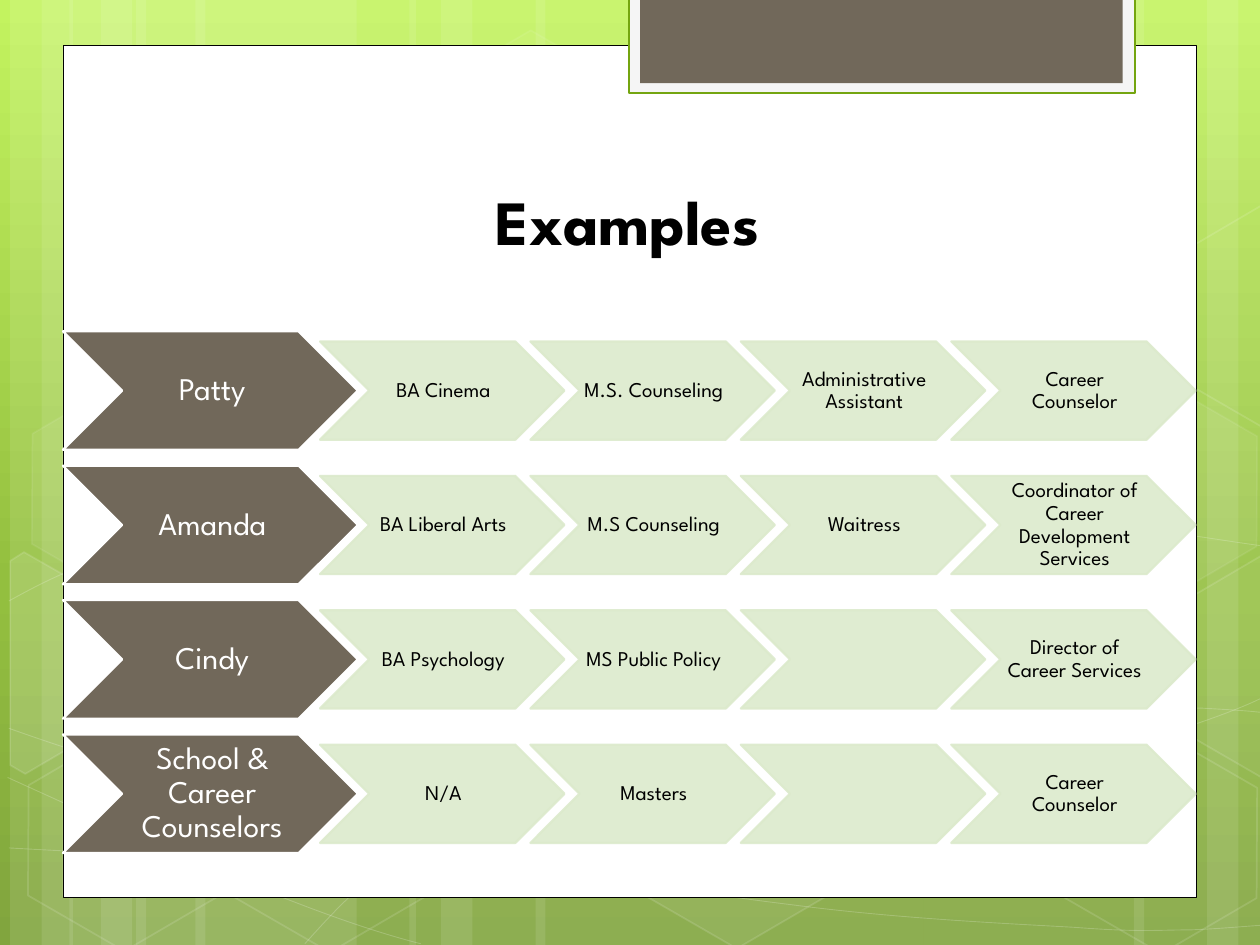
from copy import deepcopy
from math import cos, radians, sin

from lxml import etree
from pptx import Presentation
from pptx.dml.color import RGBColor
from pptx.enum.shapes import MSO_SHAPE
from pptx.enum.text import MSO_ANCHOR, PP_ALIGN
from pptx.oxml.ns import qn
from pptx.util import Inches, Pt

RECTANGLE = MSO_SHAPE.RECTANGLE
HEXAGON = MSO_SHAPE.HEXAGON
CHEVRON = MSO_SHAPE.CHEVRON
MIDDLE = MSO_ANCHOR.MIDDLE
CENTER = PP_ALIGN.CENTER

FONT = "League Spartan"
TILT = 30
COLORS = {
    "white": "FFFFFF", "black": "000000", "brown": "71685A", "pale": "DCEACC",
    "tab": "F5F5F5", "tab_edge": "74A510",
}
BACKDROP_STOPS = [(0, "C3F35F"), (0.62, "93BF3F"), (1, "81A53E")]

BANDS = [
    (1.08, 1.75), (0.08, 0.5), (0.33, 0.83), (1.55, 1.75), (0.55, 0.5), (0.8, 0.83),
    (7.33, 1.75), (9.58, 0.5), (9, 0.83), (4.25, 3.08), (3.25, 0.5), (3.5, 0.83),
]
CURVES = [
    [(0.07, 6.73), (0.61, 6.76), (1.15, 6.79), (1.9, 6.78), (2.65, 6.77), (3.58, 6.75),
     (4.58, 6.65), (5.58, 6.55), (7, 6.36), (7.92, 6.17), (8.83, 5.98), (9.77, 5.68),
     (10.07, 5.51)],
    [(0.07, 4.77), (0.36, 4.61), (0.65, 4.46), (1.21, 4.31), (1.78, 4.16), (2.59, 3.94),
     (3.47, 3.87), (4.36, 3.8), (5.44, 3.79), (6.54, 3.87), (7.64, 3.95), (9.47, 4.26),
     (10.07, 4.34)],
    [(0.06, 6.17), (1.27, 6.72), (2.47, 7.27), (3.34, 7.49)],
    [(0.07, 5.78), (0.38, 5.89), (0.7, 6), (1.28, 6.16), (1.86, 6.31), (2.73, 6.56),
     (3.57, 6.73), (4.4, 6.9), (5.45, 7.08), (6.28, 7.18), (7.11, 7.29), (8, 7.33),
     (8.53, 7.36), (9.05, 7.4), (9.19, 7.38), (9.45, 7.38), (9.71, 7.37), (9.89, 7.35),
     (10.07, 7.34)],
    [(2.42, 7.49), (2.6, 7.29), (2.78, 7.09), (3.02, 6.91), (3.26, 6.73), (3.6, 6.53),
     (3.88, 6.39), (4.16, 6.25), (4.33, 6.19), (4.7, 6.09), (5.06, 5.99), (5.73, 5.85),
     (6.08, 5.78), (6.44, 5.71), (6.49, 5.71), (6.8, 5.69), (7.11, 5.66), (7.6, 5.63),
     (7.94, 5.62), (8.29, 5.61), (8.86, 5.62), (8.86, 5.62), (9.08, 5.62), (9.31, 5.62),
     (9.53, 5.62), (9.71, 5.63), (9.88, 5.64), (9.97, 5.65), (10.06, 5.66), (10.03, 5.65),
     (10.06, 5.66)],
]
HEXAGONS = [
    (3.34, 0.36, 4, 8), (4.97, 5.89, 6, 12), (0.11, 5.91, 0, 12), (0.14, 3.12, 7, 8),
    (1.74, 5.92, 0, 12), (7.53, 4.53, 10, 12), (8.34, 5.93, 0, 12), (8.34, 3.14, 7, 8),
]
CUT_HEXAGONS = [
    ((0.36, 5.35), [(0.08, 4.45), (0.19, 4.38), (0.96, 4.82), (0.95, 5.7), (0.2, 6.14),
                    (0.08, 6.07)], 10),
    ((9.85, 5.2), [(9.26, 4.85), (10.01, 4.41), (10.09, 4.46), (10.09, 6.13),
                   (10.02, 6.17), (9.26, 5.73)], 4),
    ((9.85, 2.41), [(9.26, 2.07), (10.01, 1.63), (10.1, 1.68), (10.09, 3.35),
                    (10.02, 3.39), (9.26, 2.95)], 0),
]
CAREERS = [
    ("Patty", ["BA Cinema", "M.S. Counseling", "Administrative Assistant", "Career Counselor"]),
    ("Amanda", ["BA Liberal Arts", "M.S Counseling", "Waitress",
                "Coordinator of Career Development Services"]),
    ("Cindy", ["BA Psychology", "MS Public Policy", "", "Director of Career Services"]),
    ("School & Career Counselors", ["N/A", "Masters", "", "Career Counselor"]),
]


def paint(fill, color, parent, alpha):
    fill.solid()
    fill.fore_color.rgb = RGBColor.from_string(COLORS[color])
    if alpha < 100:
        tint = parent.find(qn("a:solidFill"))[0]
        etree.SubElement(tint, qn("a:alpha"), val=str(alpha * 1000))


def style(shape, fill=None, alpha=100, line=None, width=1, line_alpha=100):
    shape.shadow.inherit = False
    properties = shape.element.spPr
    if fill:
        paint(shape.fill, fill, properties, alpha)
    else:
        shape.fill.background()
    if line:
        shape.line.width = Pt(width)
        paint(shape.line.fill, line, properties.find(qn("a:ln")), line_alpha)
    else:
        shape.line.fill.background()


def add_preset(slide, preset, box, **look):
    shape = slide.shapes.add_shape(preset, *map(Inches, box))
    style(shape, **look)
    return shape


def add_outline(slide, points, close, **look):
    corners = [(Inches(x), Inches(y)) for x, y in points]
    builder = slide.shapes.build_freeform(*corners[0])
    builder.add_line_segments(corners[1:], close=close)
    outline = builder.convert_to_shape()
    style(outline, **look)
    return outline


def add_curve(slide, knots):
    curve = add_outline(slide, knots, False, line="white", width=0.5, line_alpha=20)
    segments = curve.element.findall(".//" + qn("a:lnTo"))
    for i in range(0, len(segments), 3):
        bezier = etree.Element(qn("a:cubicBezTo"))
        segments[i].addprevious(bezier)
        for segment in segments[i:i + 3]:
            bezier.append(segment[0])
            segment.getparent().remove(segment)


def turn(point, center, degrees):
    angle = radians(degrees)
    x, y = point[0] - center[0], point[1] - center[1]
    return (center[0] + x * cos(angle) - y * sin(angle),
            center[1] + x * sin(angle) + y * cos(angle))


def add_text(slide, box, text, size, color, insets, bold=False, spacing=1.0):
    frame = slide.shapes.add_textbox(*map(Inches, box)).text_frame
    margins = dict(zip(("margin_left", "margin_top", "margin_right", "margin_bottom"),
                       map(Inches, insets)))
    for name, value in {"word_wrap": True, "vertical_anchor": MIDDLE, **margins}.items():
        setattr(frame, name, value)
    paragraph = frame.paragraphs[0]
    paragraph.alignment = CENTER
    paragraph.line_spacing = spacing
    run = paragraph.add_run()
    run.text = text
    for name, value in {"name": FONT, "size": Pt(size), "bold": bold}.items():
        setattr(run.font, name, value)
    run.font.color.rgb = RGBColor.from_string(COLORS[color])


def add_backdrop(slide, height):
    fill = slide.background.fill
    fill.gradient()
    fill.gradient_angle = 270
    stop_list = slide.element.find(".//" + qn("a:gsLst"))
    stop_list.append(deepcopy(stop_list[-1]))
    for stop, (position, color) in zip(fill.gradient_stops, BACKDROP_STOPS):
        stop.position = position
        stop.color.rgb = RGBColor.from_string(color)
    for left, width in BANDS:
        add_preset(slide, RECTANGLE, (left, 0, width, height), fill="white", alpha=10)
    for knots in CURVES:
        add_curve(slide, knots)
    for left, top, alpha, line_alpha in HEXAGONS:
        hexagon = add_preset(slide, HEXAGON, (left, top, 1.75, 1.52),
                             fill="white" if alpha else None, alpha=alpha,
                             line="white", line_alpha=line_alpha)
        hexagon.adjustments[0] = 0.285
        hexagon.rotation = TILT
    for center, corners, alpha in CUT_HEXAGONS:
        upright = [turn(corner, center, -TILT) for corner in corners]
        cut = add_outline(slide, upright, True, fill="white" if alpha else None,
                          alpha=alpha, line="white", line_alpha=12)
        cut.rotation = TILT


def add_panel(slide, box):
    add_preset(slide, RECTANGLE, box, fill="white", line="black", width=0.5)
    tab_left = box[0] + 4.49
    add_preset(slide, RECTANGLE, (tab_left, -0.02, 4.02, 0.76),
               fill="tab", line="tab_edge", width=1.25)
    add_preset(slide, RECTANGLE, (tab_left + 0.09, -0.02, 3.83, 0.68), fill="brown")


def add_title(slide, box):
    add_text(slide, box, "Examples", 36, "black", (0.1, 0.05, 0.1, 0.05), bold=True)


def add_chevron(slide, box, text, size, color, inset, **look):
    left, top, width, height = box
    add_preset(slide, CHEVRON, box, width=1.25, **look)
    if text:
        add_text(slide, (left + height / 2, top, width - height, height), text, size, color,
                 (inset, 0.01, 0, 0.01), spacing=0.9)


def add_careers(slide, box):
    left, top, width, height = box
    name_width, name_height = 2.34, 0.94
    step_width, step_height = 1.94, 0.78
    row_pitch = (height - name_height) / (len(CAREERS) - 1)
    step_pitch = 1.67
    for row, (person, steps) in enumerate(CAREERS):
        row_top = top + row * row_pitch
        add_chevron(slide, (left, row_top, name_width, name_height), person, 18, "white", 0.03,
                    fill="brown", line="white")
        first_left = left + width - step_width - step_pitch * (len(steps) - 1)
        step_top = row_top + (name_height - step_height) / 2
        for column, text in enumerate(steps):
            step_left = first_left + column * step_pitch
            add_chevron(slide, (step_left, step_top, step_width, step_height), text, 12,
                        "black", 0.02, fill="pale", alpha=90, line="pale", line_alpha=90)


def main():
    deck = Presentation()
    deck.slide_width, deck.slide_height = Inches(10), Inches(7.5)
    slide = deck.slides.add_slide(deck.slide_layouts[6])
    add_backdrop(slide, 7.5)
    add_panel(slide, (0.5, 0.36, 9, 6.76))
    add_title(slide, (1.14, 1.12, 7.68, 1.25))
    add_careers(slide, (0.5, 2.63, 8.99, 4.14))
    deck.save("out.pptx")


if __name__ == "__main__":
    main()
